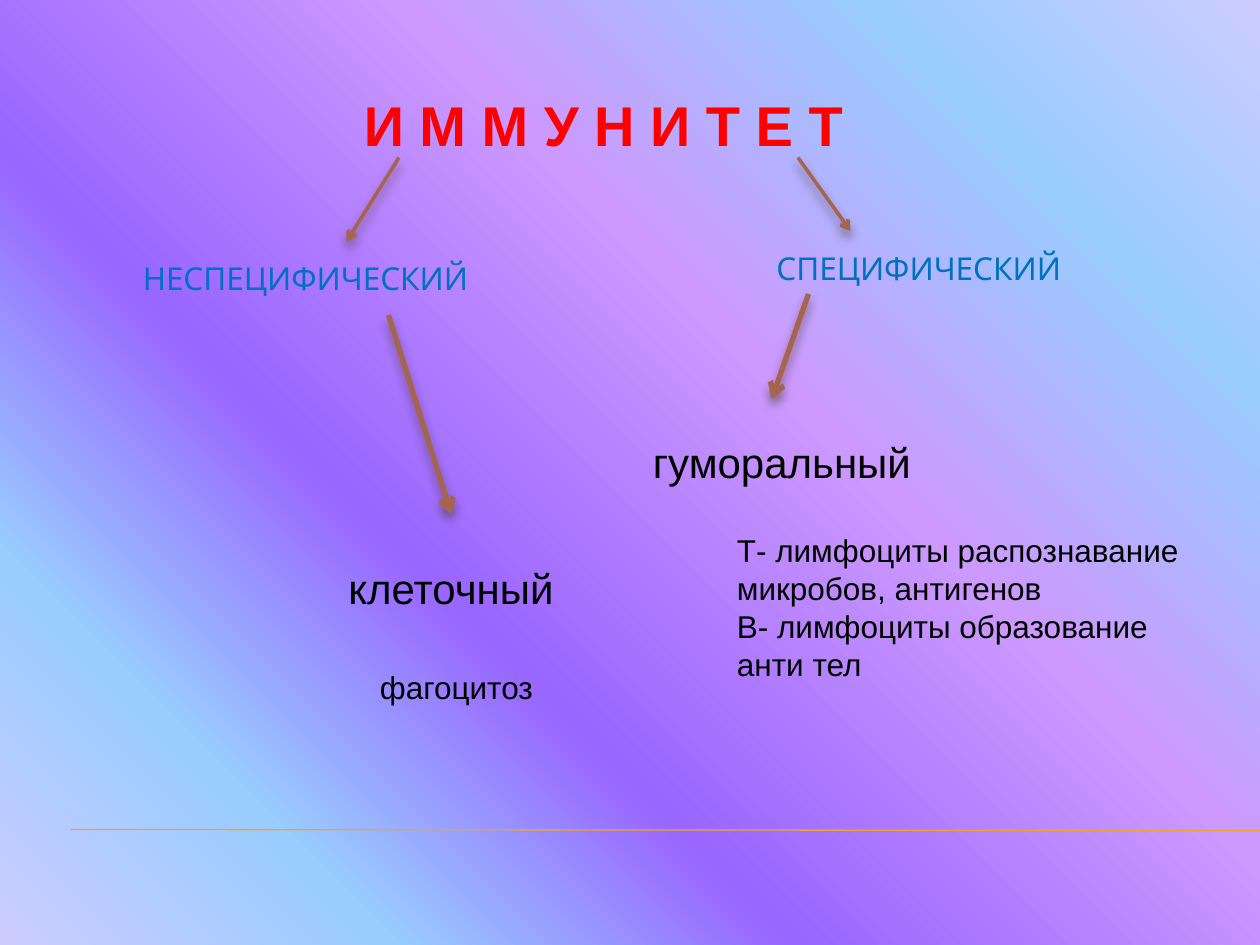
from dataclasses import dataclass

from lxml import etree
from pptx import Presentation
from pptx import util as u
from pptx.dml.color import RGBColor
from pptx.enum import shapes, text
from pptx.oxml import parse_xml
from pptx.oxml.ns import nsdecls, qn

COLS, ROWS = 120, 90
HUES = {"title": "FF0000", "kind": "0070C0", "text": "000000",
        "arrow": "A5644E", "rule": "F0A22E", "shade": "4E3B30"}
STOPS = [(0, "CCCCFF"), (18, "99CCFF"), (36, "9966FF"),
         (61, "CC99FF"), (82, "99CCFF"), (100, "CCCCFF")]


@dataclass
class Box:
    col: float
    row: float
    wide: float
    high: float


@dataclass
class Arrow:
    start: tuple[float, float]
    end: tuple[float, float]
    width: float


@dataclass
class Note:
    box: Box
    lines: list[str]
    size: int
    wrap: bool = True


ARROWS = [
    Arrow((37, 30), (43, 49), 3),
    Arrow((77, 28), (73.5, 38), 3),
    Arrow((38, 15), (33, 23), 2),
    Arrow((76, 15), (81, 22), 2),
]
KINDS = {
    1: Note(Box(6, 23, 46.2, 7), ["НЕСПЕЦИФИЧЕСКИЙ"], 18),
    3: Note(Box(61, 22, 53, 7), ["СПЕЦИФИЧЕСКИЙ"], 18),
}
NOTES = [
    Note(Box(32, 53, 23.3, 6), ["клеточный"], 24),
    Note(Box(61, 41, 34.2, 6), ["гуморальный"], 24),
    Note(Box(35, 63, 17.2, 4.8), ["фагоцитоз"], 18, False),
    Note(Box(69, 50, 45.7, 15.7),
         ["Т- лимфоциты распознавание", "микробов, антигенов",
          "В- лимфоциты образование", "анти тел"], 18, False),
]

deck = Presentation()
deck.slide_width, deck.slide_height = u.Inches(10), u.Inches(7.5)
slide = deck.slides.add_slide(deck.slide_layouts[4])


def across(col: float) -> int:
    return round(deck.slide_width * col / COLS)


def down(row: float) -> int:
    return round(deck.slide_height * row / ROWS)


def place(shape, box: Box) -> None:
    shape.left, shape.top = across(box.col), down(box.row)
    shape.width, shape.height = across(box.wide), down(box.high)


def write(shape, lines: list[str], *, size: int, hue: str = "text",
          font: str = "Arial", bold: bool = False, align=text.PP_ALIGN.LEFT,
          anchor=text.MSO_ANCHOR.TOP, wrap: bool = True, grow: bool = True) -> None:
    frame = shape.text_frame
    frame.text = "\n".join(lines)
    frame.word_wrap = wrap
    frame.vertical_anchor = anchor
    frame.auto_size = (text.MSO_AUTO_SIZE.SHAPE_TO_FIT_TEXT if grow
                       else text.MSO_AUTO_SIZE.NONE)
    for par in frame.paragraphs:
        par.alignment = align
        face = par.runs[0].font
        face.name, face.size, face.bold = font, u.Pt(size), bold
        face.color.rgb = RGBColor.from_string(HUES[hue])


def paint() -> None:
    fill = slide.background.fill
    fill.gradient()
    old = slide.element.find(".//" + qn("a:gradFill"))
    stops = "".join(f'<a:gs pos="{pos * 1000}"><a:srgbClr val="{hue}"/></a:gs>'
                    for pos, hue in STOPS)
    new = parse_xml(f'<a:gradFill {nsdecls("a")}><a:gsLst>{stops}</a:gsLst>'
                    '<a:path path="circle"><a:fillToRect t="100000" r="100000"/>'
                    '</a:path></a:gradFill>')
    old.getparent().replace(old, new)


def link(start: tuple[float, float], end: tuple[float, float],
         width: float, hue: str):
    line = slide.shapes.add_connector(
        shapes.MSO_CONNECTOR.STRAIGHT, across(start[0]), down(start[1]),
        across(end[0]), down(end[1]))
    line.line.width = u.Pt(width)
    line.line.color.rgb = RGBColor.from_string(HUES[hue])
    props = line.element.find(qn("p:spPr"))
    return props.find(qn("a:ln")), etree.SubElement(props, qn("a:effectLst"))


def point(arrow: Arrow) -> None:
    stroke, glow = link(arrow.start, arrow.end, arrow.width, "arrow")
    etree.SubElement(stroke, qn("a:tailEnd"), type="arrow")
    glow.append(parse_xml(
        f'<a:outerShdw {nsdecls("a")} blurRad="{u.Pt(6)}" dist="{u.Pt(4)}" '
        f'dir="5400000" rotWithShape="0"><a:srgbClr val="{HUES["shade"]}">'
        '<a:alpha val="60000"/></a:srgbClr></a:outerShdw>'))


def main() -> None:
    paint()
    link((6.7, 79), (COLS, 79.1), 0.75, "rule")

    head = slide.shapes.title
    place(head, Box(32, 8, 51, 7.7))
    write(head, ["И М М У Н И Т Е Т"], size=32, hue="title", bold=True,
          align=text.PP_ALIGN.CENTER)

    for hold in list(slide.placeholders):
        key = hold.placeholder_format.idx
        if key in KINDS:
            kind = KINDS[key]
            place(hold, kind.box)
            write(hold, kind.lines, size=kind.size, hue="kind", font="Cabin",
                  align=text.PP_ALIGN.CENTER, anchor=text.MSO_ANCHOR.MIDDLE,
                  grow=False)
        elif key:
            hold.element.getparent().remove(hold.element)

    for arrow in ARROWS:
        point(arrow)
    for note in NOTES:
        area = slide.shapes.add_textbox(0, 0, 0, 0)
        place(area, note.box)
        write(area, note.lines, size=note.size, wrap=note.wrap)

    deck.save("out.pptx")


if __name__ == "__main__":
    main()
